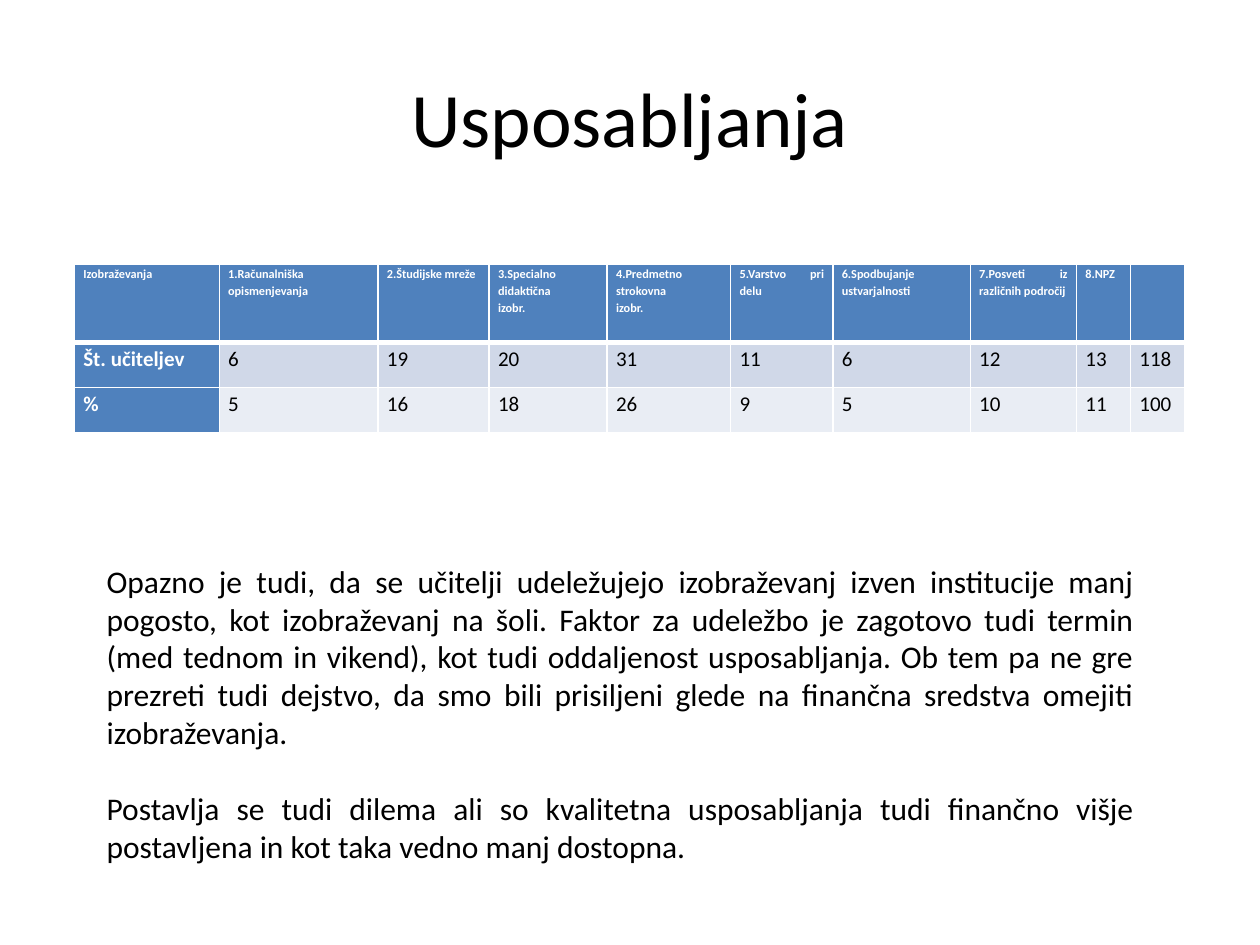
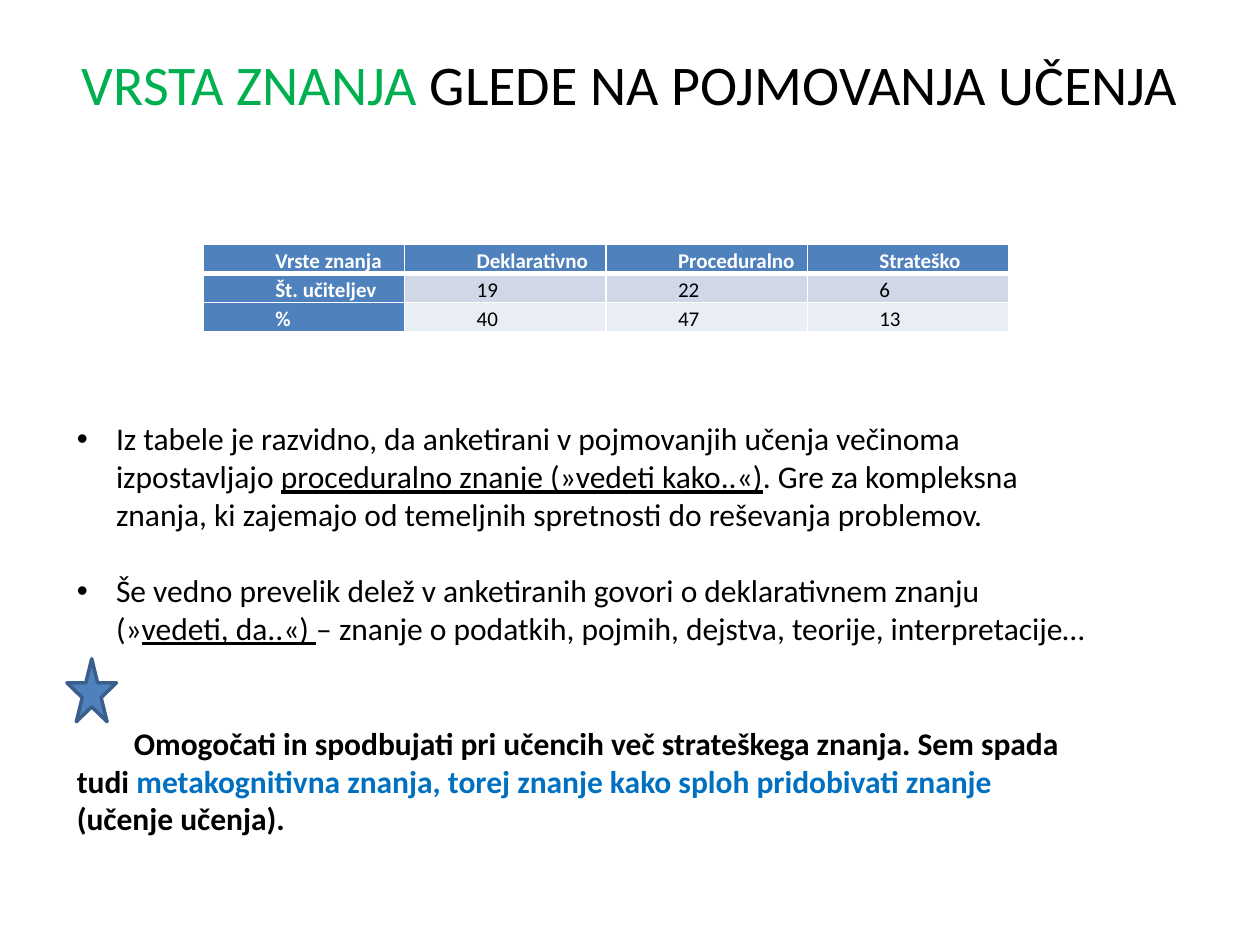
from dataclasses import dataclass

from lxml import etree
from pptx import Presentation
from pptx.dml.color import RGBColor
from pptx.enum.shapes import MSO_SHAPE
from pptx.enum.text import MSO_ANCHOR, PP_ALIGN
from pptx.oxml.ns import qn
from pptx.util import Cm, Pt

BLACK = RGBColor(0x00, 0x00, 0x00)
WHITE = RGBColor(0xFF, 0xFF, 0xFF)
BLUE = RGBColor(0x4F, 0x81, 0xBD)
DARK_BLUE = RGBColor(0x3A, 0x5F, 0x8C)
BRIGHT_BLUE = RGBColor(0x00, 0x70, 0xC0)
GREEN = RGBColor(0x00, 0xB0, 0x50)
BANDS = (RGBColor(0xD0, 0xD8, 0xE8), RGBColor(0xE9, 0xED, 0xF4))

STAR = MSO_SHAPE.STAR_5_POINT
MIDDLE = MSO_ANCHOR.MIDDLE
LEFT, CENTER, JUSTIFY = PP_ALIGN.LEFT, PP_ALIGN.CENTER, PP_ALIGN.JUSTIFY

FONT = "Calibri"
BODY_SIZE = 18
BODY_LINE = 22
CELL_SIZE = 12
HANGING = Cm(0.79)


@dataclass
class Span:
    text: str
    color: RGBColor = BLACK
    bold: bool = False
    underline: bool = False


@dataclass
class Block:
    spans: list
    align: PP_ALIGN = LEFT
    bullet: bool = False
    first_line: int = 0
    gap_lines: int = 0


class Deck:
    def __init__(self):
        self.presentation = Presentation()
        self.presentation.slide_width = Cm(25.4)
        self.presentation.slide_height = Cm(19.05)
        self.slide = None

    def new_slide(self):
        blank = self.presentation.slide_layouts[6]
        self.slide = self.presentation.slides.add_slide(blank)

    def style(self, run, size, color=BLACK, bold=False, underline=False):
        run.font.name = FONT
        run.font.size = Pt(size)
        run.font.color.rgb = color
        run.font.bold = bold
        run.font.underline = underline

    def add_spans(self, paragraph, spans, size):
        for span in spans:
            run = paragraph.add_run()
            run.text = span.text
            self.style(run, size, span.color, span.bold, span.underline)

    def indent(self, paragraph, margin, first_line=0):
        properties = paragraph._p.get_or_add_pPr()
        properties.set("marL", str(int(margin)))
        properties.set("indent", str(int(first_line)))
        return properties

    def title(self, spans, size, height):
        box = self.slide.shapes.add_textbox(Cm(1.27), Cm(0.76), Cm(22.86), height)
        frame = box.text_frame
        frame.word_wrap = True
        frame.vertical_anchor = MIDDLE
        frame.paragraphs[0].alignment = CENTER
        self.add_spans(frame.paragraphs[0], spans, size)

    def body(self, left, top, width, height, blocks):
        frame = self.slide.shapes.add_textbox(left, top, width, height).text_frame
        frame.word_wrap = True
        for index, block in enumerate(blocks):
            paragraph = frame.add_paragraph() if index else frame.paragraphs[0]
            paragraph.alignment = block.align
            paragraph.space_after = Pt(block.gap_lines * BODY_LINE)
            self.add_spans(paragraph, block.spans, BODY_SIZE)
            if block.bullet:
                properties = self.indent(paragraph, HANGING, -HANGING)
                etree.SubElement(properties, qn("a:buFont"), typeface="Arial")
                etree.SubElement(properties, qn("a:buChar"), char="•")
            else:
                self.indent(paragraph, 0, block.first_line)

    def border(self, cell, row):
        properties = cell._tc.get_or_add_tcPr()
        widths = {"L": 1, "R": 1, "T": 3 if row == 1 else 1, "B": 3 if row == 0 else 1}
        for side, width in widths.items():
            line = etree.SubElement(properties, qn(f"a:ln{side}"), w=str(int(Pt(width))))
            fill = etree.SubElement(line, qn("a:solidFill"))
            etree.SubElement(fill, qn("a:srgbClr"), val=str(WHITE))

    def table(self, left, top, widths, heights, rows, header_size, indent=0):
        table = self.slide.shapes.add_table(
            len(rows), len(widths), left, top, sum(widths), sum(heights)
        ).table
        table.first_col = True
        for column, width in zip(table.columns, widths):
            column.width = width
        for r, (height, values) in enumerate(zip(heights, rows)):
            table.rows[r].height = height
            for c, value in enumerate(values):
                heading = r == 0 or c == 0
                cell = table.cell(r, c)
                cell.margin_left = cell.margin_right = Cm(0.18)
                cell.margin_top = cell.margin_bottom = 0
                self.border(cell, r)
                cell.fill.solid()
                cell.fill.fore_color.rgb = BLUE if heading else BANDS[r - 1]
                cell.text_frame.text = value
                for paragraph in cell.text_frame.paragraphs:
                    paragraph.alignment = JUSTIFY
                    paragraph.line_spacing = 1.15
                    self.indent(paragraph, indent)
                    for run in paragraph.runs:
                        self.style(run, CELL_SIZE if r else header_size,
                                   WHITE if heading else BLACK, heading)

    def star(self, left, top, width, height):
        star = self.slide.shapes.add_shape(STAR, left, top, width, height)
        star.shadow.inherit = False
        star.fill.solid()
        star.fill.fore_color.rgb = BLUE
        star.line.color.rgb = DARK_BLUE
        star.line.width = Pt(2)


def build_trainings(deck):
    deck.new_slide()
    deck.title([Span("Usposabljanja")], 44, Cm(3.18))
    trainings = [
        ["Izobraževanja", "1.Računalniška\nopismenjevanja", "2.Študijske mreže",
         "3.Specialno didaktična\nizobr.", "4.Predmetno strokovna\nizobr.",
         "5.Varstvo pri delu", "6.Spodbujanje\nustvarjalnosti",
         "7.Posveti iz različnih področij", "8.NPZ", ""],
        ["Št. učiteljev", "6", "19", "20", "31", "11", "6", "12", "13", "118"],
        ["%", "5", "16", "18", "26", "9", "5", "10", "11", "100"],
    ]
    widths = [Cm(w) for w in (2.92, 3.2, 2.24, 2.38, 2.49, 2.06, 2.77, 2.14, 1.09, 1.09)]
    heights = [Cm(1.57), Cm(0.91), Cm(0.91)]
    deck.table(Cm(1.5), Cm(5.33), widths, heights, trainings, header_size=7)
    deck.body(Cm(1.9), Cm(11.2), Cm(21.21), Cm(7.19), [
        Block([Span(
            "Opazno je tudi, da se učitelji udeležujejo izobraževanj izven institucije "
            "manj pogosto, kot izobraževanj na šoli. Faktor za udeležbo je zagotovo tudi "
            "termin (med tednom in vikend), kot tudi oddaljenost usposabljanja. Ob tem pa "
            "ne gre prezreti tudi dejstvo, da smo bili prisiljeni glede na finančna "
            "sredstva omejiti izobraževanja.")], JUSTIFY, gap_lines=1),
        Block([Span(
            "Postavlja se tudi dilema ali so kvalitetna usposabljanja tudi finančno višje "
            "postavljena in kot taka vedno manj dostopna.")], JUSTIFY),
    ])


def build_knowledge(deck):
    deck.new_slide()
    deck.title([Span("VRSTA ZNANJA ", GREEN), Span("GLEDE NA POJMOVANJA UČENJA")],
               32, Cm(1.82))
    knowledge = [
        ["Vrste znanja", "Deklarativno", "Proceduralno", "Strateško"],
        ["Št. učiteljev", "19", "22", "6"],
        ["%", "40", "47", "13"],
    ]
    deck.table(Cm(4.1), Cm(4.93), [Cm(4.06)] * 4, [Cm(0.58)] * 3, knowledge,
               header_size=CELL_SIZE, indent=Cm(1.27))
    deck.body(Cm(1.3), Cm(8.33), Cm(21), Cm(9.5), [
        Block([
            Span("Iz tabele je razvidno, da anketirani v pojmovanjih učenja večinoma "
                 "izpostavljajo "),
            Span("proceduralno znanje (»vedeti kako..«)", underline=True),
            Span(". Gre za kompleksna znanja, ki zajemajo od temeljnih spretnosti do "
                 "reševanja problemov."),
        ], bullet=True, gap_lines=1),
        Block([
            Span("Še vedno prevelik delež v anketiranih govori o deklarativnem znanju (»"),
            Span("vedeti, da..«) ", underline=True),
            Span("– znanje o podatkih, pojmih, dejstva, teorije, interpretacije…"),
        ], bullet=True, gap_lines=2),
        Block([
            Span("Omogočati in spodbujati pri učencih več strateškega znanja. Sem spada "
                 "tudi ", bold=True),
            Span("metakognitivna znanja, torej znanje kako sploh pridobivati znanje ",
                 BRIGHT_BLUE, bold=True),
            Span("(učenje učenja).", bold=True),
        ], first_line=Cm(1.15)),
    ])
    deck.star(Cm(1.35), Cm(13.28), Cm(1), Cm(1.27))


def main():
    deck = Deck()
    build_trainings(deck)
    build_knowledge(deck)
    deck.presentation.save("out.pptx")


if __name__ == "__main__":
    main()
